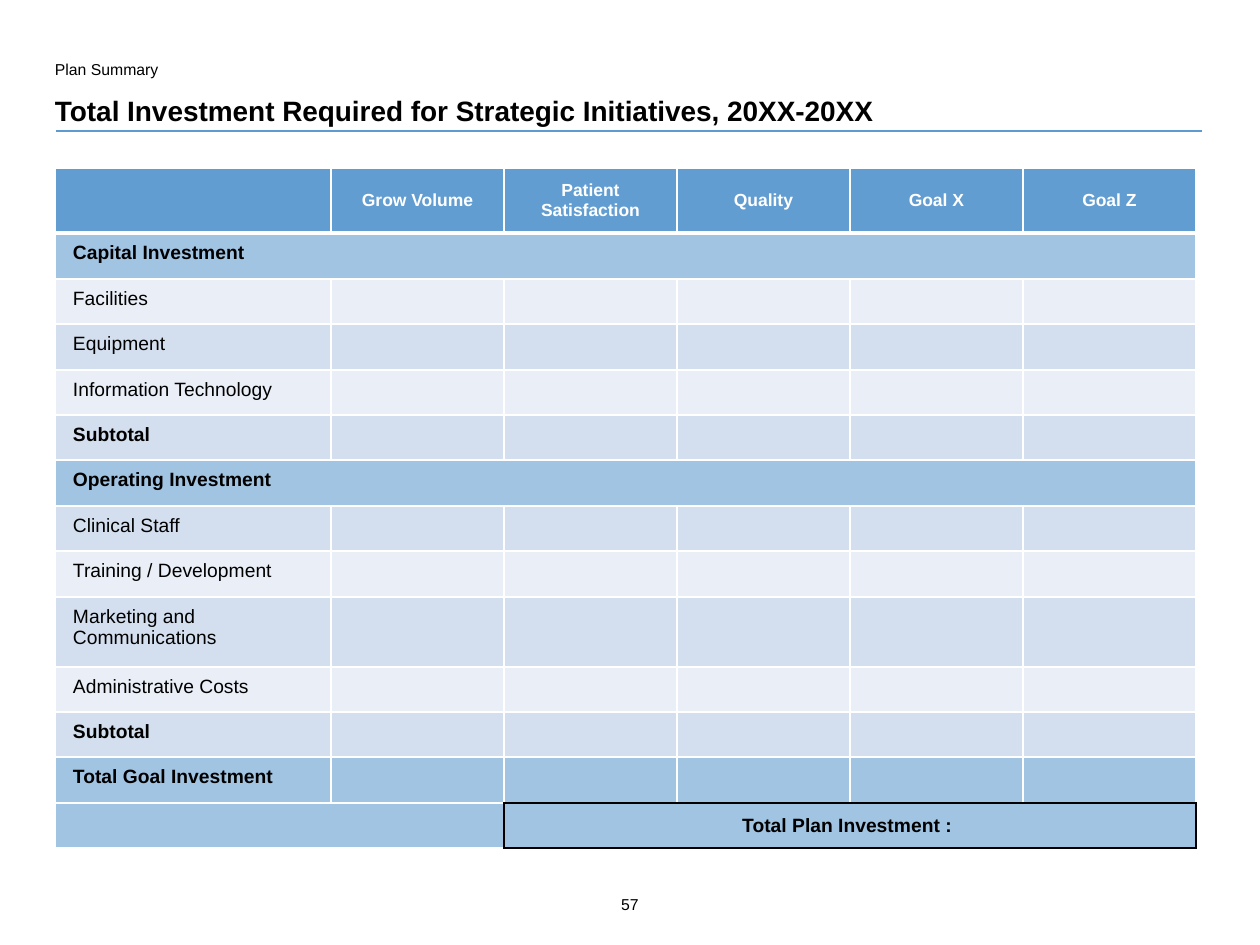
"""Build a slide with a table of total investment by strategic goal."""
from lxml.etree import SubElement
from pptx import Presentation
from pptx.dml.color import RGBColor
from pptx.enum.shapes import MSO_CONNECTOR as Connector
from pptx.enum.text import MSO_ANCHOR as Anchor, PP_ALIGN as Align
from pptx.oxml.ns import qn
from pptx.util import Pt

PX = 914400 / 126
HEADER, BAND, LIGHT, MEDIUM = "629DD1", "A1C4E3", "EAEFF7", "D3DFEE"
WHITE, BLACK = "FFFFFF", "000000"


def color(value):
    return RGBColor.from_string(value)


def write(target, text, size=11, bold=False, ink=BLACK, align=Align.LEFT,
          anchor=Anchor.TOP, margins=(0, 0)):
    frame = target.text_frame
    frame.word_wrap = True
    holder = target if hasattr(target, "is_merge_origin") else frame
    holder.vertical_anchor = anchor
    holder.margin_left = holder.margin_right = round(margins[0] * PX)
    holder.margin_top = holder.margin_bottom = round(margins[1] * PX)
    paragraph = frame.paragraphs[0]
    paragraph.alignment = align
    if not text:
        SubElement(paragraph._p, qn("a:endParaRPr"), sz=str(size * 100))
        return
    run = paragraph.add_run()
    run.text = text
    run.font.name, run.font.size, run.font.bold = "Arial", Pt(size), bold
    run.font.color.rgb = color(ink)


presentation = Presentation()
presentation.slide_width, presentation.slide_height = round(1260 * PX), round(945 * PX)
slide = presentation.slides.add_slide(presentation.slide_layouts[6])

rule = slide.shapes.add_connector(
    Connector.STRAIGHT, *[round(n * PX) for n in (56, 131, 1202, 131)])
rule.line.color.rgb = color("5D9ACF")
rule.line.width = Pt(0.75)
SubElement(rule._element.spPr, qn("a:effectLst"))

labels = [
    ((587, 890, 86, 33), "57", dict(size=9, align=Align.CENTER, margins=(5, 5))),
    ((55, 55, 364, 25), "Plan Summary", dict(size=9, margins=(0, 5))),
    ((55, 93, 1145, 34), "Total Investment Required for Strategic Initiatives, 20XX-20XX",
     dict(size=16, bold=True, anchor=Anchor.BOTTOM)),
]
for box, text, style in labels:
    write(slide.shapes.add_textbox(*[round(n * PX) for n in box]), text, **style)

goals = ["", "Grow Volume", "Patient Satisfaction", "Quality", "Goal X", "Goal Z"]
items = [
    ("Capital Investment", BAND), ("Facilities", LIGHT), ("Equipment", MEDIUM),
    ("Information Technology", LIGHT), ("Subtotal", MEDIUM),
    ("Operating Investment", BAND), ("Clinical Staff", MEDIUM),
    ("Training / Development", LIGHT), ("Marketing and Communications", MEDIUM),
    ("Administrative Costs", LIGHT), ("Subtotal", MEDIUM),
    ("Total Goal Investment", BAND),
]
rows = [(goals, HEADER)]
rows += [([item] + [""] * 5, fill) for item, fill in items]
rows.append((["", "", "Total Plan Investment : ", "", "", ""], BAND))
last = len(rows) - 1

row_edges = [168, 233, 279, 324, 370, 415, 460, 506, 551, 597, 667, 712, 757, 803, 848]
table = slide.shapes.add_table(
    len(rows), len(goals), *[round(n * PX) for n in (55, 168, 1141, 680)]).table
table.first_row = table.horz_banding = False
for index, column in enumerate(table.columns):
    column.width = round((173 if index else 276) * PX)
for row, top, bottom in zip(table.rows, row_edges, row_edges[1:]):
    row.height = round((bottom - top) * PX)

for row, (texts, fill) in enumerate(rows):
    for column, text in enumerate(texts):
        cell = table.cell(row, column)
        centered = row in (0, last)
        write(cell, text, size=10 if row == 0 else 11,
              bold=centered or fill == BAND or text == "Subtotal",
              ink=WHITE if row == 0 else BLACK,
              align=Align.CENTER if centered else Align.LEFT,
              anchor=Anchor.MIDDLE if centered else Anchor.TOP, margins=(18, 9))
        for side in "LRTB":
            thick = (row, side) in ((0, "B"), (1, "T"))
            framed = (row == last and (column > 1 or side == "R")
                      or row == last - 1 and column > 1 and side == "B")
            border = SubElement(cell._tc.get_or_add_tcPr(), qn(f"a:ln{side}"),
                                w=str(Pt(3 if thick else 1)))
            paint = SubElement(border, qn("a:solidFill"))
            SubElement(paint, qn("a:srgbClr"), val=BLACK if framed else WHITE)
        cell.fill.solid()
        cell.fill.fore_color.rgb = color(fill)

for row, start, end in [(1, 0, 5), (6, 0, 5), (last, 0, 1), (last, 2, 5)]:
    table.cell(row, start).merge(table.cell(row, end))

presentation.save("out.pptx")
